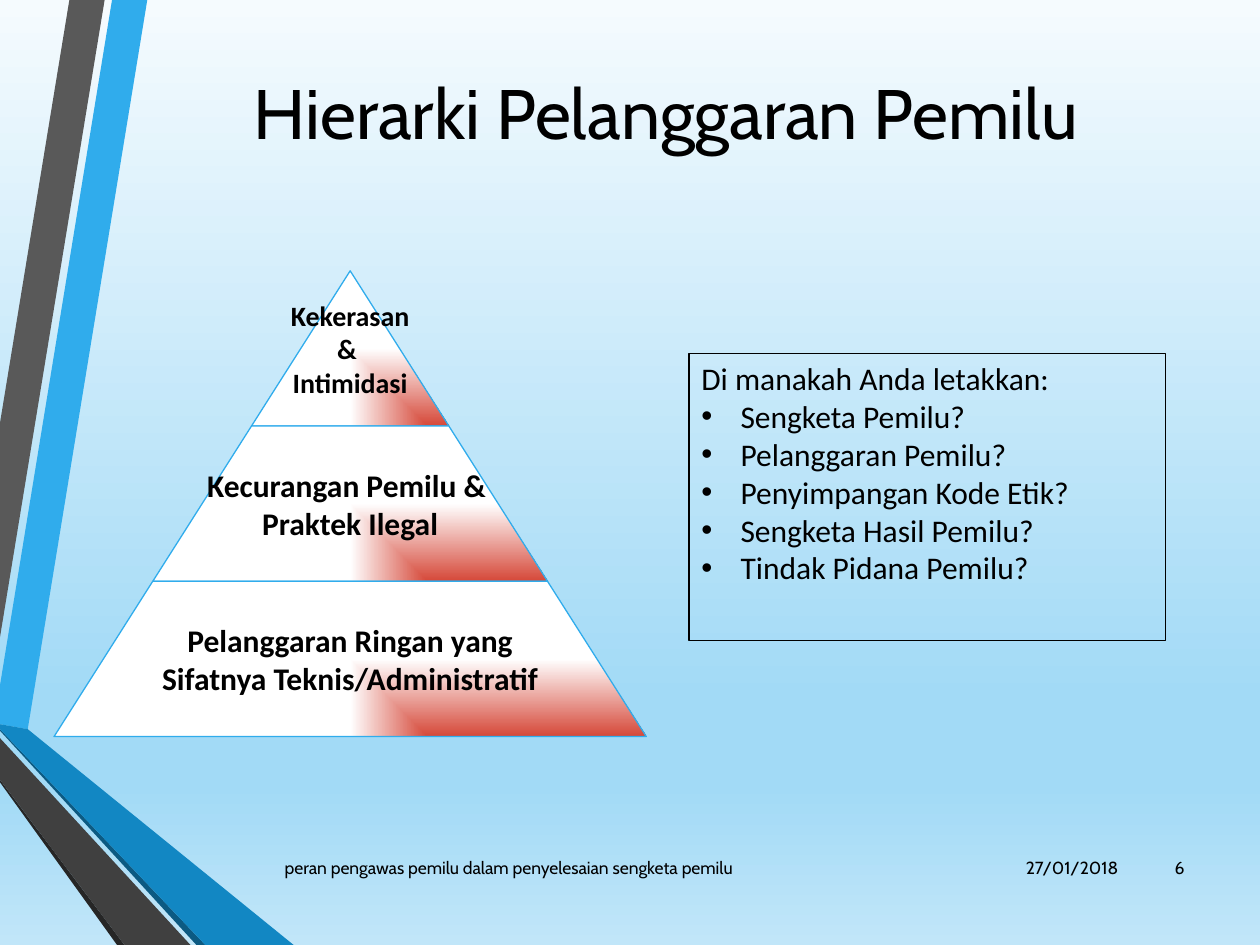
from lxml.etree import SubElement
from pptx import Presentation
from pptx.dml.color import RGBColor
from pptx.enum.shapes import MSO_SHAPE
from pptx.enum.text import MSO_ANCHOR, PP_ALIGN
from pptx.oxml.ns import qn
from pptx.util import Cm, Pt

WIDTH, HEIGHT = 25.4, 19.05
SKY = [(0, "F5FBFE"), (74, "A2DAF6"), (83, "A2DAF6"), (100, "C1E6F9")]
RED_CORNER = [(1, "D64A3B"), (100, "FFFFFF")]
BLUE = "30ACEC"

# Corner ribbons: colour and outline in cm
RIBBONS = [
    (BLUE, [(0, 13.82), (0, 14.6), (0.56, 14.7), (2.97, 0), (2.26, 0)]),
    ("595959", [(2.11, 0), (1.4, 0), (0, 8.53), (0, 12.85)]),
    ("262626", [(0, 15.72), (0, 15.77), (2.36, HEIGHT), (2.51, HEIGHT)]),
    ("0C5A82", [(0, 14.7), (0, 14.73), (3.96, HEIGHT), (4.14, HEIGHT)]),
    ("1287C3", [(0, 14.7), (4.14, HEIGHT), (5.92, HEIGHT), (0.56, 14.7), (0, 14.6)]),
    ("404040", [(0, 15.72), (2.51, HEIGHT), (3.84, HEIGHT), (0, 14.88)]),
]

TITLE = "Hierarki Pelanggaran Pemilu"
# Footer: text, left, width, alignment
FOOTER = [
    ("27/01/2018", 20.4, 2.39, PP_ALIGN.RIGHT),
    ("peran pengawas pemilu dalam penyelesaian sengketa pemilu", 5.49, 14.76, PP_ALIGN.LEFT),
    ("6", 22.94, 1.19, PP_ALIGN.RIGHT),
]
# Pyramid from the top down: lines, text size
TIERS = [
    (["Kekerasan", "& ", "Intimidasi"], 16),
    (["Kecurangan Pemilu & ", "Praktek Ilegal"], 18),
    (["Pelanggaran Ringan yang", "Sifatnya Teknis/Administratif"], 18),
]
QUESTION = "Di manakah Anda letakkan:"
CHOICES = [
    "Sengketa Pemilu?",
    "Pelanggaran Pemilu?",
    "Penyimpangan Kode Etik?",
    "Sengketa Hasil Pemilu?",
    "Tindak Pidana Pemilu?",
]
CENTRE_X, APEX_Y, TIER_HEIGHT, HALF_STEP = 7.06, 5.46, 3.13, 1.99


def rgb(color):
    return RGBColor.from_string(color)


def set_gradient(fill, parent, stops, corner=False):
    """Fill top to bottom, or outwards from the bottom right corner."""
    fill.gradient()
    grad = parent.find(".//" + qn("a:gradFill"))
    for child in list(grad):
        grad.remove(child)
    stop_list = SubElement(grad, qn("a:gsLst"))
    for pos, color in stops:
        stop = SubElement(stop_list, qn("a:gs"), pos=str(pos * 1000))
        SubElement(stop, qn("a:srgbClr"), val=color)
    if corner:
        shade = SubElement(grad, qn("a:path"), path="rect")
        SubElement(shade, qn("a:fillToRect"), l="100000", t="100000")
    else:
        SubElement(grad, qn("a:lin"), ang="5400000", scaled="0")


def add_polygon(s, points):
    start, *rest = [(Cm(x), Cm(y)) for x, y in points]
    builder = s.shapes.build_freeform(*start)
    builder.add_line_segments(rest, close=True)
    sp = builder.convert_to_shape()
    sp.shadow.inherit = False
    return sp


def write(sp, lines, size, font="Calibri", bold=False, align=PP_ALIGN.LEFT,
          anchor=MSO_ANCHOR.TOP, wrap=True, margin=None):
    tf = sp.text_frame
    tf.word_wrap = wrap
    tf.vertical_anchor = anchor
    if margin is not None:
        tf.margin_left = tf.margin_right = tf.margin_top = tf.margin_bottom = Cm(margin)
    for i, line in enumerate(lines):
        p = tf.add_paragraph() if i else tf.paragraphs[0]
        p.alignment = align
        r = p.add_run()
        r.text = line
        r.font.size, r.font.name, r.font.bold = Pt(size), font, bold
        r.font.color.rgb = rgb("000000")
    return tf


def add_bullet(p):
    pPr = p._p.get_or_add_pPr()
    pPr.set("marL", str(Cm(0.79)))
    pPr.set("indent", str(-Cm(0.79)))
    SubElement(pPr, qn("a:buFont"), typeface="Arial")
    SubElement(pPr, qn("a:buChar"), char="•")


def add_label(s, text, left, top, width, height, size, **kwargs):
    sp = s.shapes.add_textbox(Cm(left), Cm(top), Cm(width), Cm(height))
    write(sp, [text], size, font="Cabin", **kwargs)


def add_pyramid(s):
    for i, (lines, size) in enumerate(TIERS):
        top, bottom = APEX_Y + i * TIER_HEIGHT, APEX_Y + (i + 1) * TIER_HEIGHT
        upper, lower = i * HALF_STEP, (i + 1) * HALF_STEP
        sp = add_polygon(s, [(CENTRE_X - lower, bottom), (CENTRE_X - upper, top),
                             (CENTRE_X + upper, top), (CENTRE_X + lower, bottom)])
        set_gradient(sp.fill, sp._element.spPr, RED_CORNER, corner=True)
        sp.line.color.rgb = rgb(BLUE)
        sp.line.width = Pt(0.75)
        write(sp, lines, size, bold=True, align=PP_ALIGN.CENTER,
              anchor=MSO_ANCHOR.MIDDLE, wrap=False, margin=0)


def add_question_box(s):
    sp = s.shapes.add_shape(MSO_SHAPE.RECTANGLE, Cm(13.89), Cm(7.12), Cm(9.6), Cm(5.8))
    sp.shadow.inherit = False
    sp.fill.background()
    sp.line.color.rgb = rgb("000000")
    sp.line.width = Pt(0.75)
    tf = write(sp, [QUESTION, *CHOICES], 18)
    for p in tf.paragraphs[1:]:
        add_bullet(p)


def main():
    prs = Presentation()
    prs.slide_width, prs.slide_height = Cm(WIDTH), Cm(HEIGHT)
    s = prs.slides.add_slide(prs.slide_layouts[6])
    set_gradient(s.background.fill, s._element, SKY)
    for color, points in RIBBONS:
        sp = add_polygon(s, points)
        sp.fill.solid()
        sp.fill.fore_color.rgb = rgb(color)
        sp.line.fill.background()
    add_label(s, TITLE, 2.72, 1.27, 21.41, 5.51, 40, align=PP_ALIGN.CENTER)
    for text, left, width, align in FOOTER:
        add_label(s, text, left, 16.97, width, 1.02, 10, align=align,
                  anchor=MSO_ANCHOR.MIDDLE)
    add_pyramid(s)
    add_question_box(s)
    prs.save("out.pptx")


if __name__ == "__main__":
    main()
